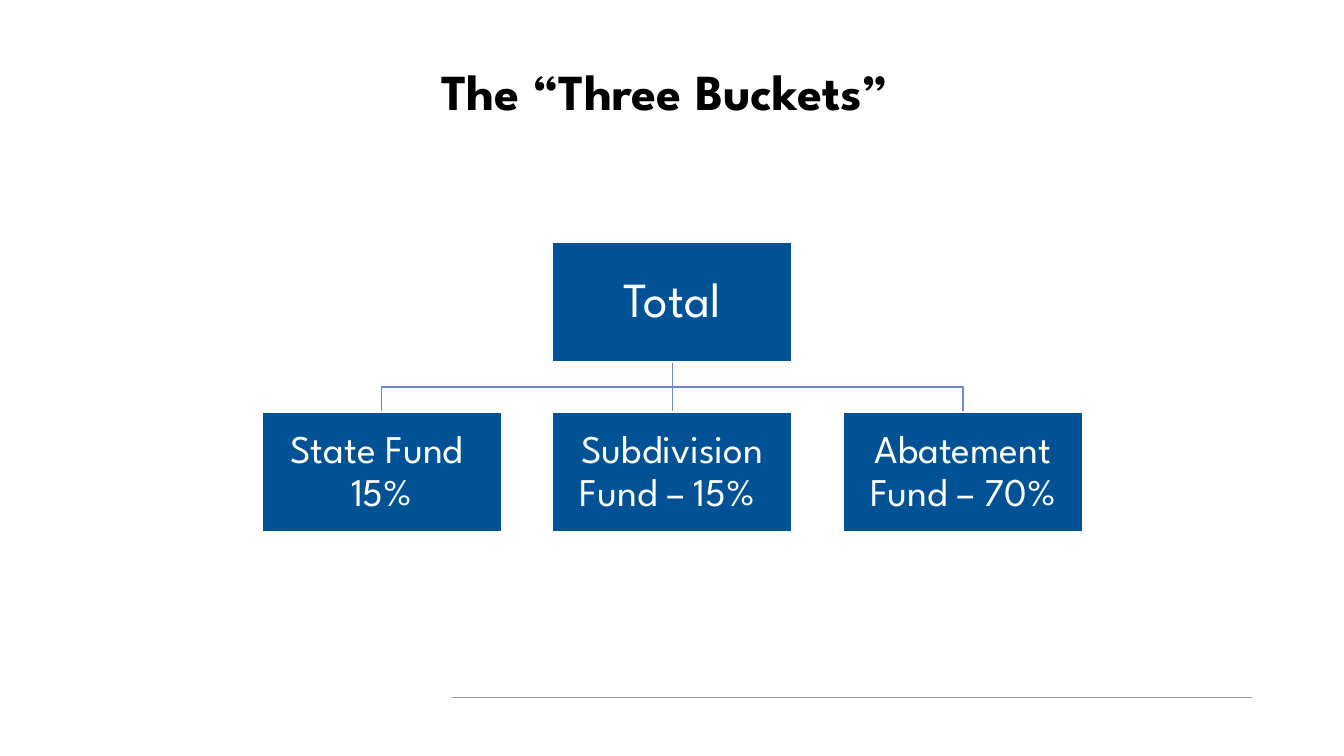
"""Build the "Three Buckets" fund hierarchy slide."""
from dataclasses import dataclass

from lxml import etree
from pptx import Presentation
from pptx.dml.color import RGBColor
from pptx.enum.shapes import MSO_CONNECTOR, MSO_SHAPE
from pptx.enum.text import MSO_ANCHOR, MSO_AUTO_SIZE, PP_ALIGN
from pptx.oxml.ns import qn
from pptx.slide import Slide
from pptx.text.text import TextFrame
from pptx.util import Pt

STRAIGHT = MSO_CONNECTOR.STRAIGHT
RECTANGLE = MSO_SHAPE.RECTANGLE
TOP, MIDDLE = MSO_ANCHOR.TOP, MSO_ANCHOR.MIDDLE
NO_AUTOFIT = MSO_AUTO_SIZE.NONE
CENTER = PP_ALIGN.CENTER


@dataclass(frozen=True)
class Theme:
    font: str = "League Spartan"
    ink: RGBColor = RGBColor(0x00, 0x00, 0x00)
    white: RGBColor = RGBColor(0xFF, 0xFF, 0xFF)
    bucket: RGBColor = RGBColor(0x00, 0x52, 0x95)
    branch: RGBColor = RGBColor(0x6D, 0x89, 0xCB)
    rule: RGBColor = RGBColor(0x92, 0x98, 0x97)
    title_size: float = 36
    total_size: float = 35
    fund_size: float = 28


@dataclass(frozen=True)
class Bucket:
    text: str
    column: int
    top: float
    size: float


THEME = Theme()
BOX_WIDTH, BOX_HEIGHT = 171.4, 85.7
CENTER_X, PITCH = 480.2, 207.6
TOTAL_TOP, FUND_TOP = 172.8, 294.5
INSET = 1.5

TOTAL = Bucket("Total", 0, TOTAL_TOP, THEME.total_size)
FUNDS = [
    Bucket(text, column, FUND_TOP, THEME.fund_size)
    for column, text in enumerate(
        ["State Fund  15%", "Subdivision Fund – 15% ", "Abatement Fund – 70%"], start=-1
    )
]


def write_text(frame: TextFrame, text: str, *, size: float, color: RGBColor,
               bold: bool = False, anchor: MSO_ANCHOR = MIDDLE) -> None:
    frame.word_wrap = True
    frame.auto_size = NO_AUTOFIT
    frame.vertical_anchor = anchor
    para = frame.paragraphs[0]
    para.alignment = CENTER
    para.line_spacing = 0.9
    para.space_before = Pt(0)
    span = para.add_run()
    span.text = text
    span.font.name = THEME.font
    span.font.size = Pt(size)
    span.font.bold = bold
    span.font.color.rgb = color


def add_title(page: Slide, text: str) -> None:
    title = page.shapes.title
    title.left, title.top, title.width, title.height = Pt(132.5), Pt(44.6), Pt(694), Pt(72)
    write_text(title.text_frame, text, size=THEME.title_size, color=THEME.ink,
               bold=True, anchor=TOP)


def add_line(page: Slide, start: tuple[float, float], end: tuple[float, float],
             color: RGBColor, width: float) -> None:
    line = page.shapes.add_connector(STRAIGHT, *map(Pt, start + end))
    line.line.color.rgb = color
    line.line.width = Pt(width)
    etree.SubElement(line._element.spPr, qn("a:effectLst"))


def add_branch(page: Slide, fund: Bucket) -> None:
    start_y, end_y = TOTAL_TOP + BOX_HEIGHT, FUND_TOP
    end_x = CENTER_X + fund.column * PITCH
    if fund.column == 0:
        add_line(page, (CENTER_X, start_y), (end_x, end_y), THEME.branch, 1)
        return
    middle_y = (start_y + end_y) / 2
    corners = [(CENTER_X, middle_y), (end_x, middle_y), (end_x, end_y)]
    builder = page.shapes.build_freeform(Pt(CENTER_X), Pt(start_y))
    builder.add_line_segments([(Pt(x), Pt(y)) for x, y in corners], close=False)
    branch = builder.convert_to_shape()
    branch.shadow.inherit = False
    branch.fill.background()
    branch.line.color.rgb = THEME.branch
    branch.line.width = Pt(1)


def add_bucket(page: Slide, bucket: Bucket) -> None:
    left = CENTER_X + bucket.column * PITCH - BOX_WIDTH / 2
    box = page.shapes.add_shape(RECTANGLE, Pt(left), Pt(bucket.top),
                                Pt(BOX_WIDTH), Pt(BOX_HEIGHT))
    box.shadow.inherit = False
    box.fill.solid()
    box.fill.fore_color.rgb = THEME.bucket
    box.line.color.rgb = THEME.white
    box.line.width = Pt(1.5)
    frame = box.text_frame
    frame.margin_left = frame.margin_right = Pt(INSET)
    frame.margin_top = frame.margin_bottom = Pt(INSET)
    write_text(frame, bucket.text, size=bucket.size, color=THEME.white)


def main() -> None:
    deck = Presentation()
    deck.slide_width, deck.slide_height = Pt(960), Pt(540)
    page = deck.slides.add_slide(deck.slide_layouts.get_by_name("Title Only"))
    page.background.fill.solid()
    page.background.fill.fore_color.rgb = THEME.white
    add_line(page, (322.6, 498.2), (894.2, 498.2), THEME.rule, 0.75)
    add_title(page, "The “Three Buckets” ")
    for fund in FUNDS:
        add_branch(page, fund)
    for bucket in [TOTAL, *FUNDS]:
        add_bucket(page, bucket)
    deck.save("out.pptx")


if __name__ == "__main__":
    main()
